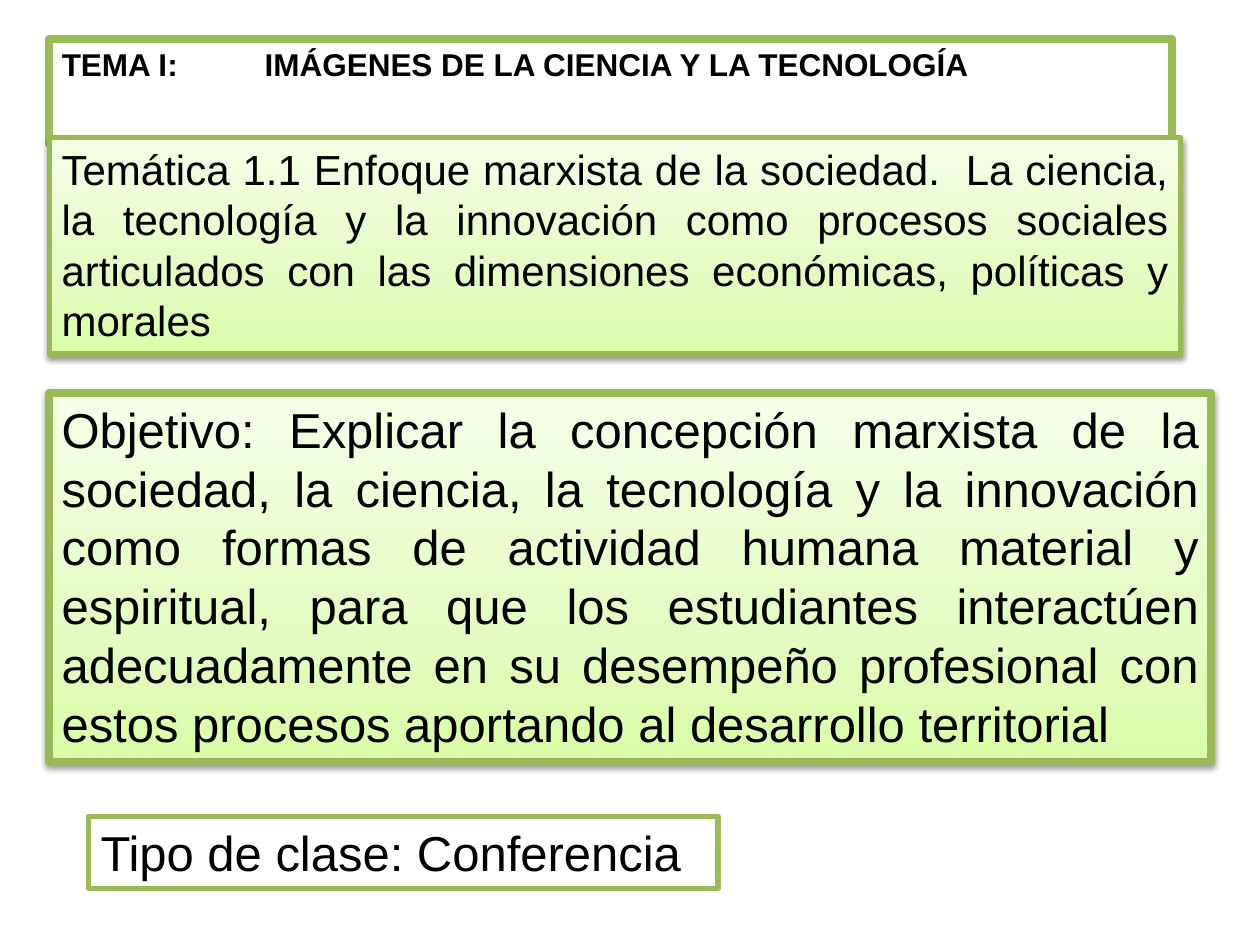
from copy import deepcopy

from lxml import etree
from pptx import Presentation
from pptx.dml.color import RGBColor
from pptx.enum.shapes import MSO_SHAPE
from pptx.enum.text import MSO_ANCHOR, MSO_AUTO_SIZE, PP_ALIGN
from pptx.oxml import parse_xml
from pptx.oxml.ns import nsdecls, qn
from pptx.util import Inches, Pt

RECT = MSO_SHAPE.RECTANGLE
TOP = MSO_ANCHOR.TOP
GROW = MSO_AUTO_SIZE.SHAPE_TO_FIT_TEXT
LEFT, JUSTIFY = PP_ALIGN.LEFT, PP_ALIGN.JUSTIFY

BLACK = RGBColor(0x00, 0x00, 0x00)
WHITE = RGBColor(0xFF, 0xFF, 0xFF)
GREEN = RGBColor(0x9B, 0xBB, 0x59)
MOSS = RGBColor(0x98, 0xB9, 0x55)
FADE = (
    (0, RGBColor(0xDA, 0xFD, 0xA7)),
    (0.35, RGBColor(0xE4, 0xFC, 0xC2)),
    (1, RGBColor(0xF5, 0xFF, 0xE7)),
)
SHADOW = (
    f'<a:outerShdw {nsdecls("a")} blurRad="{Pt(3.1)}" dist="{Pt(1.6)}" '
    'dir="5400000" rotWithShape="0"><a:srgbClr val="000000">'
    '<a:alpha val="38000"/></a:srgbClr></a:outerShdw>'
)


def write(shape, text, size, bold=False, align=LEFT):
    frame = shape.text_frame
    frame.word_wrap = True
    frame.auto_size = GROW
    frame.vertical_anchor = TOP
    para = frame.paragraphs[0]
    para.alignment = align
    run = para.add_run()
    run.text = text
    font = run.font
    font.name, font.size, font.bold = "Arial", Pt(size), bold
    font.color.rgb = BLACK


def frame_box(shape, box, color, width):
    """Place a shape and give it a plain outline without shadow."""
    shape.left, shape.top, shape.width, shape.height = map(Inches, box)
    shape.line.color.rgb = color
    shape.line.width = Pt(width)
    shape.shadow.inherit = False


def fade_fill(shape):
    """Light at the top, greener at the bottom, with a soft shadow."""
    fill = shape.fill
    fill.gradient()
    fill.gradient_angle = 90
    props = shape._element.spPr
    first = props.find(qn("a:gradFill")).find(qn("a:gsLst"))[0]
    first.addnext(deepcopy(first))
    for stop, (place, color) in zip(fill.gradient_stops, FADE):
        stop.position = place
        stop.color.rgb = color
    props.find(qn("a:effectLst")).append(parse_xml(SHADOW))


def add_title(slide, box, text, tab):
    title = slide.shapes.title
    frame_box(title, box, GREEN, 4.5)
    title.fill.solid()
    title.fill.fore_color.rgb = WHITE
    write(title, text, 18, bold=True)
    # The tab stop sets the gap after the topic number
    props = title.text_frame.paragraphs[0]._p.get_or_add_pPr()
    stops = etree.SubElement(props, qn("a:tabLst"))
    etree.SubElement(stops, qn("a:tab"), pos=str(Inches(tab)), algn="l")


def add_panel(slide, box, text, size, width):
    panel = slide.shapes.add_shape(RECT, *map(Inches, box))
    frame_box(panel, box, MOSS, width)
    fade_fill(panel)
    write(panel, text, size, align=JUSTIFY)


def add_label(slide, box, text):
    label = slide.shapes.add_shape(RECT, *map(Inches, box))
    frame_box(label, box, GREEN, 3)
    label.fill.solid()
    label.fill.fore_color.rgb = WHITE
    write(label, text, 28)


def main():
    deck = Presentation()
    deck.slide_width, deck.slide_height = Inches(10), Inches(7.5)
    slide = deck.slides.add_slide(deck.slide_layouts[5])

    # Topic heading
    add_title(slide, (0.39, 0.31, 8.91, 0.4),
              "TEMA I:\tIMÁGENES DE LA CIENCIA Y LA TECNOLOGÍA", 1.61)
    # Goal of the class
    add_panel(slide, (0.39, 3.12, 9.22, 2.93),
              "Objetivo: Explicar la concepción marxista de la sociedad, "
              "la ciencia, la tecnología y la innovación como formas de "
              "actividad humana material y espiritual, para que los "
              "estudiantes interactúen adecuadamente en su desempeño "
              "profesional con estos procesos aportando al desarrollo "
              "territorial", 28, 4.5)
    # Theme
    add_panel(slide, (0.39, 1.09, 8.98, 1.72),
              "Temática 1.1 Enfoque marxista de la sociedad.  La ciencia, "
              "la tecnología y la innovación como procesos sociales "
              "articulados con las dimensiones económicas, políticas y "
              "morales", 24, 3)
    # Kind of class
    add_label(slide, (0.7, 6.48, 5, 0.57), "Tipo de clase: Conferencia")

    deck.save("out.pptx")


if __name__ == "__main__":
    main()
